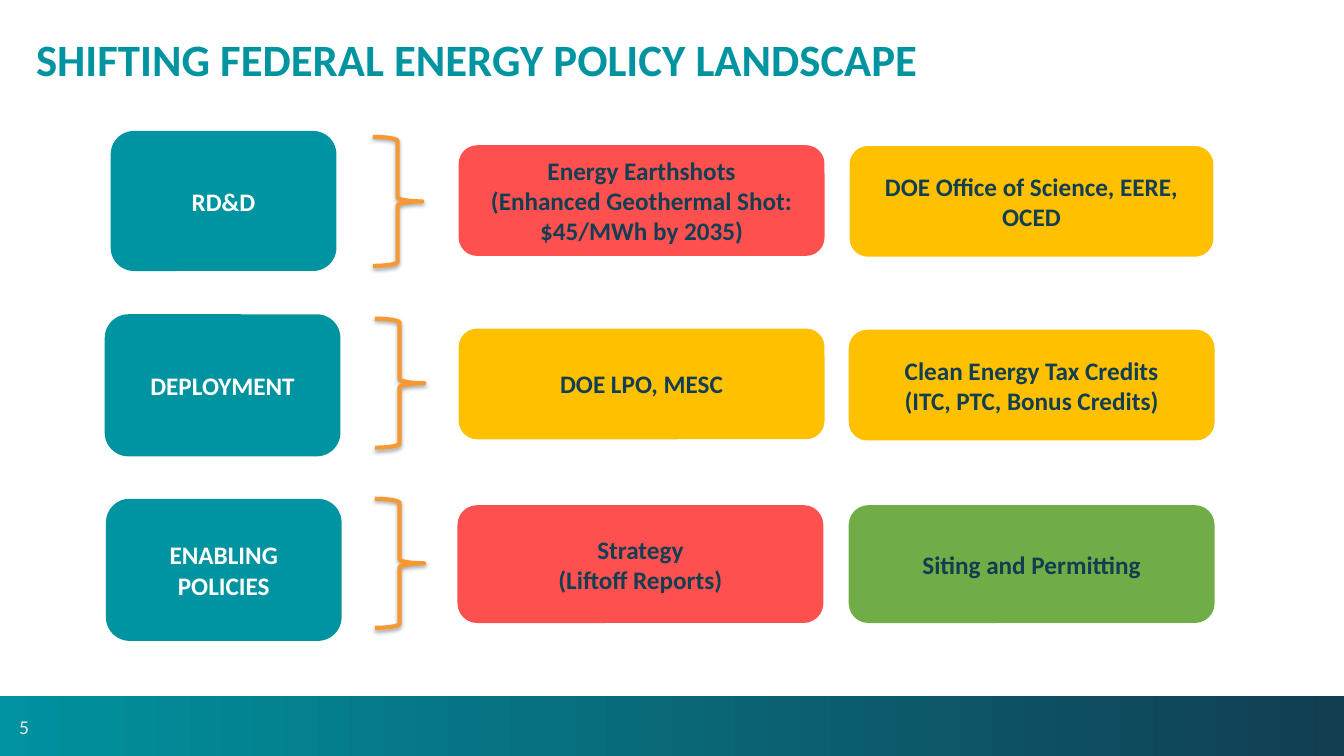
from lxml import etree
from pptx import Presentation
from pptx import util as u
from pptx.dml.color import RGBColor
from pptx.enum import shapes, text
from pptx.oxml import ns

COLORS = {
    "teal": "0094A1",
    "band_start": "00929F",
    "navy": "123E52",
    "red": "FF5050",
    "amber": "FFC000",
    "green": "70AD47",
    "orange": "F79933",
    "white": "FFFFFF",
    "pale": "E7E6E6",
    "black": "000000",
}

ROWS = [
    {
        "category": ("RD&D", (2.79, 3.3, 5.69, 3.53)),
        "brace": (9.4, 3.45),
        "cards": [
            (["Energy Earthshots", "(Enhanced Geothermal Shot: $45/MWh by 2035)"],
             "red", (11.56, 3.66, 9.22, 2.79)),
            (["DOE Office of Science, EERE, OCED"],
             "amber", (21.41, 3.68, 9.17, 2.79)),
        ],
    },
    {
        "category": ("DEPLOYMENT", (2.64, 7.92, 5.94, 3.58)),
        "brace": (9.45, 8.03),
        "cards": [
            (["DOE LPO, MESC"], "amber", (11.56, 8.28, 9.22, 2.79)),
            (["Clean Energy Tax Credits", "(ITC, PTC, Bonus Credits)"],
             "amber", (21.39, 8.31, 9.22, 2.79)),
        ],
    },
    {
        "category": ("ENABLING POLICIES", (2.67, 12.57, 5.94, 3.58)),
        "brace": (9.45, 12.57),
        "cards": [
            (["Strategy", "(Liftoff Reports)"], "red", (11.53, 12.73, 9.22, 2.97)),
            (["Siting and Permitting"], "green", (21.39, 12.73, 9.22, 2.97)),
        ],
    },
]


class PolicySlide:
    font_name = "Calibri"
    brace_size = (1.24, 3.25)

    def __init__(self, slide):
        self.slide = slide

    def color(self, name):
        return RGBColor.from_string(COLORS[name])

    def add_lines(self, shape, lines, size, color, bold=True, spacing=None,
                  align=text.PP_ALIGN.LEFT, anchor=text.MSO_ANCHOR.MIDDLE):
        frame = shape.text_frame
        frame.word_wrap = True
        frame.vertical_anchor = anchor
        for index, line in enumerate(lines):
            paragraph = frame.add_paragraph() if index else frame.paragraphs[0]
            paragraph.alignment = align
            paragraph.line_spacing = spacing
            run = paragraph.add_run()
            run.text = line
            run.font.name = self.font_name
            run.font.size = u.Pt(size)
            run.font.bold = bold
            run.font.color.rgb = self.color(color)

    def shape(self, kind, box):
        shape = self.slide.shapes.add_shape(kind, *map(u.Cm, box))
        shape.shadow.inherit = False
        return shape

    def label(self, line, box, size, color, **style):
        shape = self.slide.shapes.add_textbox(*map(u.Cm, box))
        self.add_lines(shape, [line], size, color, **style)

    def band(self, box, start, end):
        shape = self.shape(shapes.MSO_SHAPE.RECTANGLE, box)
        shape.line.fill.background()
        shape.fill.gradient()
        shape.fill.gradient_angle = 0
        for stop, position, name in zip(shape.fill.gradient_stops, (0, 1), (start, end)):
            stop.position = position
            stop.color.rgb = self.color(name)

    def card(self, lines, box, fill, color):
        shape = self.shape(shapes.MSO_SHAPE.ROUNDED_RECTANGLE, box)
        shape.fill.solid()
        shape.fill.fore_color.rgb = self.color(fill)
        shape.line.fill.background()
        self.add_lines(shape, lines, 18, color, align=text.PP_ALIGN.CENTER)

    def brace(self, position):
        shape = self.shape(shapes.MSO_SHAPE.LEFT_BRACE, position + self.brace_size)
        shape.rotation = 180
        shape.fill.background()
        shape.line.color.rgb = self.color("orange")
        shape.line.width = u.Pt(3)
        effects = shape.element.spPr.find(ns.qn("a:effectLst"))
        shadow = etree.SubElement(
            effects, ns.qn("a:outerShdw"), blurRad=str(u.Pt(3.1)),
            dist=str(u.Pt(1.8)), dir="5400000", rotWithShape="0")
        tint = etree.SubElement(shadow, ns.qn("a:srgbClr"), val=COLORS["black"])
        etree.SubElement(tint, ns.qn("a:alpha"), val="35000")


def main():
    presentation = Presentation()
    presentation.slide_width = u.Cm(33.87)
    presentation.slide_height = u.Cm(19.05)
    page = PolicySlide(presentation.slides.add_slide(presentation.slide_layouts[6]))

    page.band((-0.1, 17.53, 34.01, 1.83), "band_start", "navy")
    page.label("SHIFTING FEDERAL ENERGY POLICY LANDSCAPE", (0.66, 0.84, 32.66, 1.96),
               32, "teal", spacing=0.9, anchor=text.MSO_ANCHOR.TOP)
    page.label("5", (0.23, 17.81, 7.62, 1.02), 14, "pale", bold=False)

    for row in ROWS:
        name, box = row["category"]
        page.card([name], box, "teal", "white")
        page.brace(row["brace"])
        for lines, fill, card_box in row["cards"]:
            page.card(lines, card_box, fill, "navy")

    presentation.save("out.pptx")


if __name__ == "__main__":
    main()
